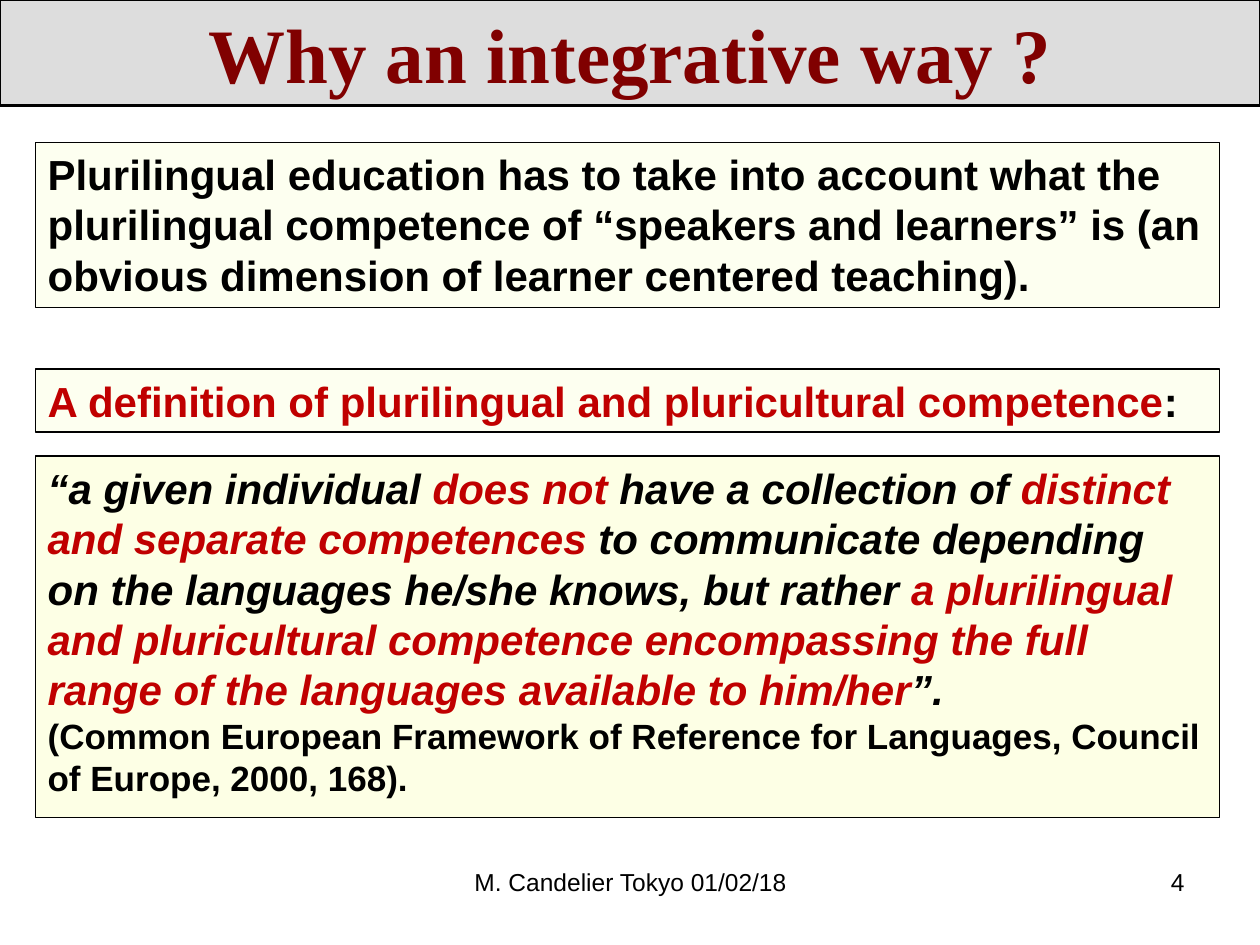
from dataclasses import dataclass
from typing import Optional

from lxml.etree import SubElement
from pptx import Presentation
from pptx.dml.color import RGBColor
from pptx.enum.shapes import MSO_SHAPE as Preset
from pptx.enum.text import MSO_ANCHOR as Anchor, PP_ALIGN as Align
from pptx.oxml.ns import qn
from pptx.util import Inches, Pt

COLORS = {
    "black": "000000",
    "red": "C00000",
    "maroon": "800000",
    "gray": "DDDDDD",
    "cream": "FDFFE5",
}


def rgb(name: str) -> RGBColor:
    return RGBColor.from_string(COLORS[name])


@dataclass
class Span:
    text: str
    color: str = "black"
    size: int = 24
    bold: bool = True
    italic: bool = False
    name: str = "Arial"
    break_before: bool = False


@dataclass
class Panel:
    left: float
    top: float
    width: float
    height: float
    spans: list[Span]
    fill: Optional[str] = None
    opacity: int = 100
    line: float = 0.75
    align: Align = Align.LEFT
    anchor: Anchor = Anchor.TOP


def write_span(para, span: Span) -> None:
    if span.break_before:
        para.add_line_break()
    run = para.add_run()
    run.text = span.text
    formats = {
        "name": span.name,
        "size": Pt(span.size),
        "bold": span.bold,
        "italic": span.italic,
    }
    for key, value in formats.items():
        setattr(run.font, key, value)
    run.font.color.rgb = rgb(span.color)


def draw_panel(page, panel: Panel) -> None:
    place = [Inches(n) for n in (panel.left, panel.top, panel.width, panel.height)]
    if panel.fill:
        box = page.shapes.add_shape(Preset.RECTANGLE, *place)
        box.shadow.inherit = False
        box.fill.solid()
        box.fill.fore_color.rgb = rgb(panel.fill)
        box.line.color.rgb = rgb("black")
        box.line.width = Pt(panel.line)
        if panel.opacity < 100:
            color = box.fill._xPr.find(qn("a:solidFill"))[0]
            SubElement(color, qn("a:alpha"), val=str(panel.opacity * 1000))
    else:
        box = page.shapes.add_textbox(*place)
    frame = box.text_frame
    formats = {
        "word_wrap": True,
        "vertical_anchor": panel.anchor,
        "margin_left": Inches(0.1),
        "margin_right": Inches(0.1),
        "margin_top": Inches(0.05),
        "margin_bottom": Inches(0.05),
    }
    for key, value in formats.items():
        setattr(frame, key, value)
    para = frame.paragraphs[0]
    para.alignment = panel.align
    for span in panel.spans:
        write_span(para, span)


def quote(text: str, color: str = "black") -> Span:
    return Span(text, color, italic=True)


def footer(left: float, width: float, text: str, align: Align) -> Panel:
    return Panel(left, 6.83, width, 0.52, [Span(text, size=14, bold=False)], align=align)


def content(top: float, height: float, spans: list[Span], opacity: int = 55) -> Panel:
    return Panel(0.28, top, 9.4, height, spans, "cream", opacity)


PANELS = [
    footer(3.42, 3.17, "M. Candelier Tokyo 01/02/18", Align.CENTER),
    footer(7.17, 2.33, "4", Align.RIGHT),
    Panel(
        0, 0, 10, 0.84,
        [Span("Why an integrative way ?", "maroon", 44, name="Times New Roman")],
        "gray", line=1.5, align=Align.CENTER, anchor=Anchor.MIDDLE,
    ),
    content(1.13, 1.31, [
        Span("Plurilingual education has to take into account what the "
             "plurilingual competence of “speakers and learners” is (an "
             "obvious dimension of learner centered teaching)."),
    ]),
    content(3.62, 2.87, [
        quote("“a given individual "),
        quote("does not ", "red"),
        quote("have a collection of "),
        quote("distinct and separate competences", "red"),
        quote(" to communicate depending on the languages he/she knows, but rather "),
        quote("a plurilingual and pluricultural competence encompassing the "
              "full range of the languages available to him/her", "red"),
        quote("”. "),
        Span("(Common European Framework of Reference for Languages, "
             "Council of Europe, 2000, 168).", size=20, break_before=True),
    ], opacity=100),
    content(2.93, 0.5, [
        Span("A definition of plurilingual and pluricultural competence", "red"),
        Span(":"),
    ]),
]


def main() -> None:
    deck = Presentation()
    deck.slide_width, deck.slide_height = Inches(10), Inches(7.5)
    page = deck.slides.add_slide(deck.slide_layouts[6])
    for panel in PANELS:
        draw_panel(page, panel)
    deck.save("out.pptx")


if __name__ == "__main__":
    main()
